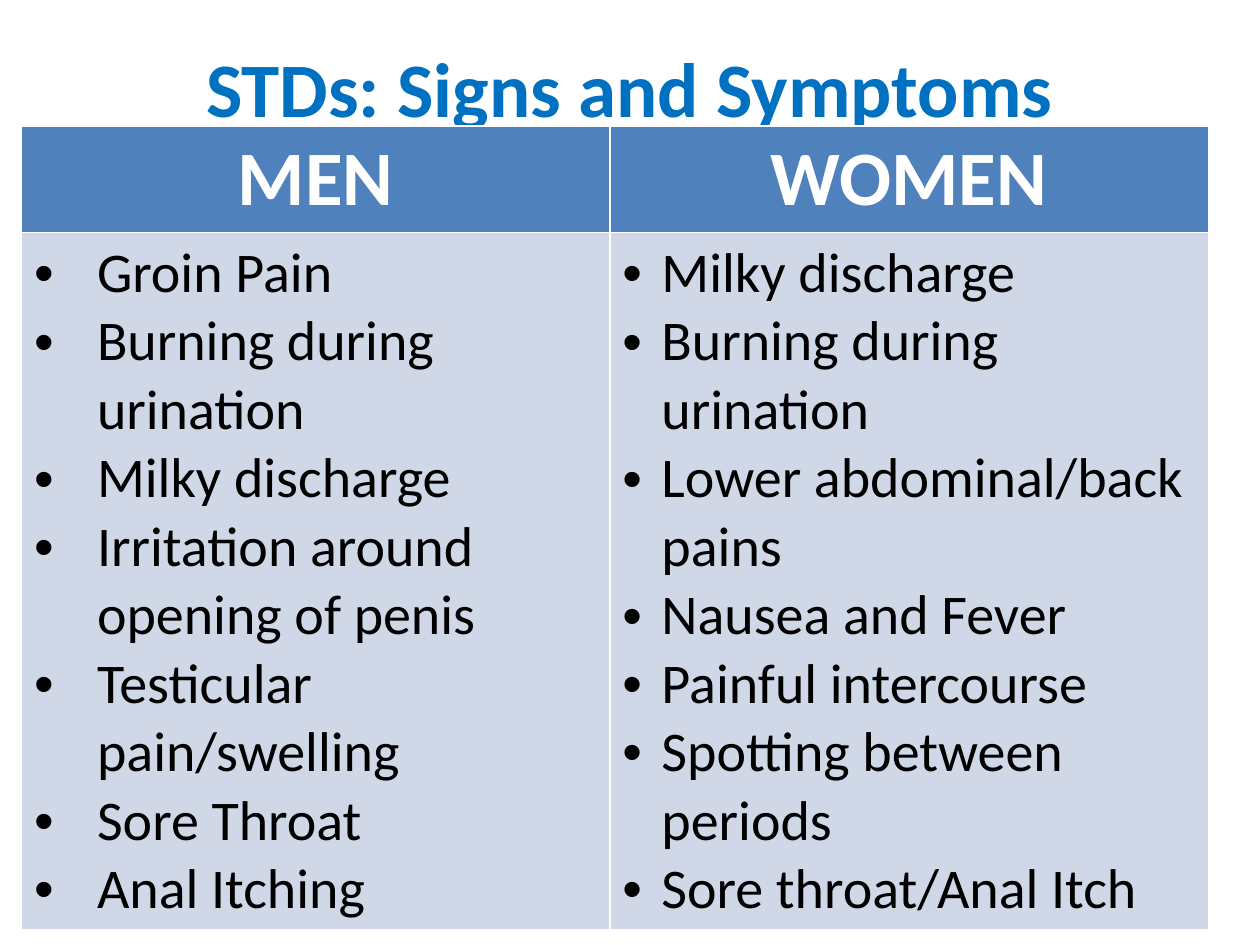
import pptx
import pptx.util
import pptx.dml.color
import pptx.enum.text
import pptx.oxml
from lxml import etree

# Content: heading, bullet indent in inches, signs
TITLE = "STDs: Signs and Symptoms"
GROUPS = [
    ("MEN", 0.5, [
        "Groin Pain",
        "Burning during urination",
        "Milky discharge",
        "Irritation around opening of penis",
        "Testicular pain/swelling",
        "Sore Throat",
        "Anal Itching",
    ]),
    ("WOMEN", 0.31, [
        "Milky discharge",
        "Burning during urination",
        "Lower abdominal/back pains",
        "Nausea and Fever",
        "Painful intercourse",
        "Spotting between periods",
        "Sore throat/Anal Itch",
    ]),
]
COLORS = {"title": "0070C0", "head": "4F81BD", "body": "D0D8E8",
          "light": "FFFFFF", "dark": "000000"}
COLS, ROWS = (4.67, 4.75), (0.77, 5.31)
FONT = "Calibri"
Inch = pptx.util.Inches
CENTER = pptx.enum.text.PP_ALIGN.CENTER
LEFT = pptx.enum.text.PP_ALIGN.LEFT


def rgb(name):
    return pptx.dml.color.RGBColor.from_string(COLORS[name])


def style(para, size, color, bold, align):
    font = para.font
    font.name, font.size, font.bold = FONT, pptx.util.Pt(size), bold
    font.color.rgb = rgb(color)
    para.alignment = align


def bullet(para, indent):
    props = para._p.get_or_add_pPr()
    props.set("marL", str(Inch(indent)))
    props.set("indent", str(-Inch(indent)))
    mark = etree.Element(pptx.oxml.ns.qn("a:buChar"), char="•")
    face = etree.Element(pptx.oxml.ns.qn("a:buFont"), typeface="Arial")
    props.insert(0, face)
    props.insert(1, mark)


def fill(cell, color):
    cell.fill.solid()
    cell.fill.fore_color.rgb = rgb(color)


prs = pptx.Presentation()
prs.slide_width, prs.slide_height = Inch(10), Inch(7.5)
slide = prs.slides.add_slide(prs.slide_layouts[5])

# Title
title = slide.shapes.title
title.left, title.top = Inch(0.5), Inch(0.25)
title.width, title.height = Inch(9), Inch(0.87)
title.text_frame.text = TITLE
title.text_frame.vertical_anchor = pptx.enum.text.MSO_ANCHOR.MIDDLE
style(title.text_frame.paragraphs[0], 44, "title", True, CENTER)

# Table: one column per group, borders come from the table style
table = slide.shapes.add_table(2, len(GROUPS), Inch(0.17), Inch(1),
                               Inch(sum(COLS)), Inch(sum(ROWS))).table
for row, high in zip(table.rows, ROWS):
    row.height = Inch(high)

for col, (head, indent, signs) in enumerate(GROUPS):
    table.columns[col].width = Inch(COLS[col])
    top, body = table.cell(0, col), table.cell(1, col)
    fill(top, "head")
    top.text = head
    style(top.text_frame.paragraphs[0], 44, "light", True, CENTER)

    fill(body, "body")
    body.text = "\n".join(signs)
    for para in body.text_frame.paragraphs:
        style(para, 32, "dark", False, LEFT)
        bullet(para, indent)

prs.save("out.pptx")
